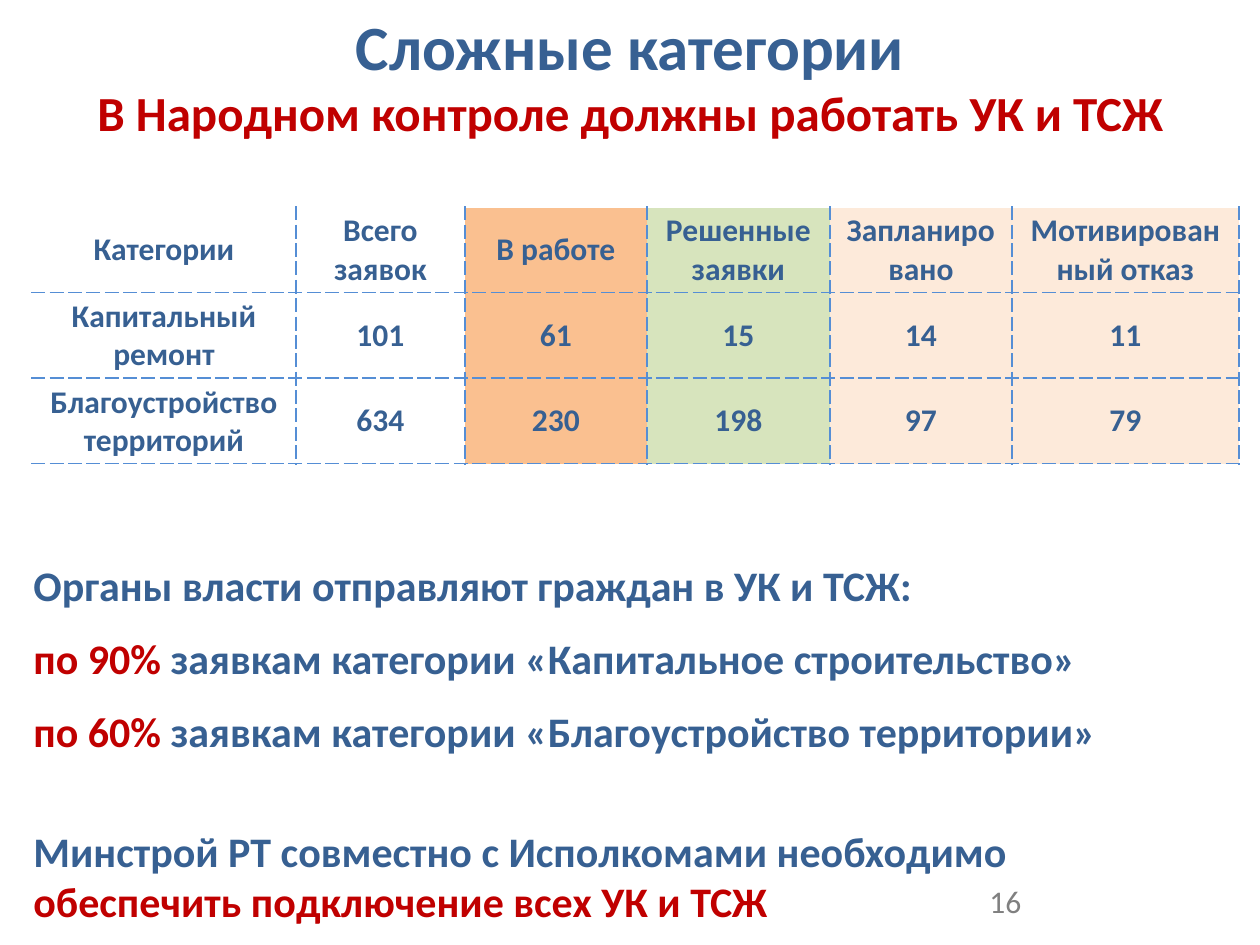
from lxml import etree
from pptx import Presentation
from pptx.dml.color import RGBColor
from pptx.enum.text import MSO_ANCHOR, MSO_AUTO_SIZE, PP_ALIGN
from pptx.oxml import parse_xml
from pptx.oxml.ns import nsdecls, qn
from pptx.util import Pt

PX = 914400 / 126
CENTER = PP_ALIGN.CENTER
MIDDLE = MSO_ANCHOR.MIDDLE
FIT_SHAPE = MSO_AUTO_SIZE.SHAPE_TO_FIT_TEXT

BLUE = RGBColor(0x37, 0x60, 0x92)
RED = RGBColor(0xC0, 0x00, 0x00)
GRAY = RGBColor(0x80, 0x80, 0x80)
GRID = RGBColor(0x55, 0x8E, 0xD5)
ORANGE = RGBColor(0xFA, 0xC0, 0x90)
GREEN = RGBColor(0xD7, 0xE4, 0xBD)
PEACH = RGBColor(0xFD, 0xEA, 0xDA)


def px(*lengths):
    return [round(length * PX) for length in lengths]


def add_run(paragraph, text, size, color, bold=True):
    run = paragraph.add_run()
    run.text = text
    run.font.name = "Calibri"
    run.font.size = Pt(size)
    run.font.bold = bold
    run.font.color.rgb = color


prs = Presentation()
prs.slide_width, prs.slide_height = px(1260, 945)
slide = prs.slides.add_slide(prs.slide_layouts[5])

title = slide.shapes.title
title.left, title.top, title.width, title.height = px(0, 0, 1260, 149)
title.text_frame.auto_size = FIT_SHAPE
heading = title.text_frame.paragraphs[0]
heading.alignment = CENTER
add_run(heading, "Сложные категории", 36, BLUE)
heading.add_line_break()
etree.SubElement(heading._p.find(qn("a:br")), qn("a:rPr"), sz="3600", b="1")
add_run(heading, "В Народном контроле должны работать УК и ТСЖ", 28, RED)

requests = [
    ["Категории", "Всего заявок", "В работе", "Решенные заявки", "Запланировано", "Мотивированный отказ"],
    ["Капитальный ремонт", "101", "61", "15", "14", "11"],
    ["Благоустройство территорий", "634", "230", "198", "97", "79"],
]
column_widths = [264, 169, 182, 183, 182, 227]
column_fills = [None, None, ORANGE, GREEN, PEACH, PEACH]
row_height = 85

table = slide.shapes.add_table(
    len(requests), len(column_widths),
    *px(32, 207, sum(column_widths), row_height * len(requests))).table
table.first_row = False
table.horz_banding = False
for column, width in zip(table.columns, px(*column_widths)):
    column.width = width
for r, values in enumerate(requests):
    table.rows[r].height = px(row_height)[0]
    for c, value in enumerate(values):
        cell = table.cell(r, c)
        cell.vertical_anchor = MIDDLE
        cell.margin_left, cell.margin_right, cell.margin_top, cell.margin_bottom = px(13, 13, 5, 5)
        if column_fills[c] is None:
            cell.fill.background()
        else:
            cell.fill.solid()
            cell.fill.fore_color.rgb = column_fills[c]
        paragraph = cell.text_frame.paragraphs[0]
        paragraph.alignment = CENTER
        add_run(paragraph, value, 18, BLUE)
        sides = [("L", c > 0), ("R", True), ("T", r > 0), ("B", True)]
        for position, side in enumerate(side for side, drawn in sides if drawn):
            border = parse_xml(
                f'<a:ln{side} {nsdecls("a")} w="12700"><a:solidFill><a:srgbClr val="{GRID}"/>'
                f'</a:solidFill><a:prstDash val="sysDash"/></a:ln{side}>')
            cell._tc.get_or_add_tcPr().insert(position, border)

statements = [
    ((21, 553, 1218, 218), 13, [
        [("Органы власти отправляют граждан в УК и ТСЖ:", BLUE)],
        [("по 90%", RED), (" заявкам категории «Капитальное строительство»", BLUE)],
        [("по 60%", RED), (" заявкам категории «Благоустройство территории»", BLUE)],
    ]),
    ((21, 819, 1050, 115), 0, [
        [("Минстрой РТ совместно с Исполкомами необходимо", BLUE)],
        [("обеспечить подключение всех УК и ТСЖ", RED)],
    ]),
]
for bounds, gap, lines in statements:
    frame = slide.shapes.add_textbox(*px(*bounds)).text_frame
    frame.word_wrap = True
    frame.auto_size = FIT_SHAPE
    for i, line in enumerate(lines):
        paragraph = frame.add_paragraph() if i else frame.paragraphs[0]
        if i:
            paragraph.space_before = Pt(gap)
        for text, color in line:
            add_run(paragraph, text, 24, color)

page_number = slide.shapes.add_textbox(*px(977, 876, 221, 50)).text_frame
page_number.word_wrap = True
add_run(page_number.paragraphs[0], "16", 18, GRAY, bold=False)

prs.save("out.pptx")
